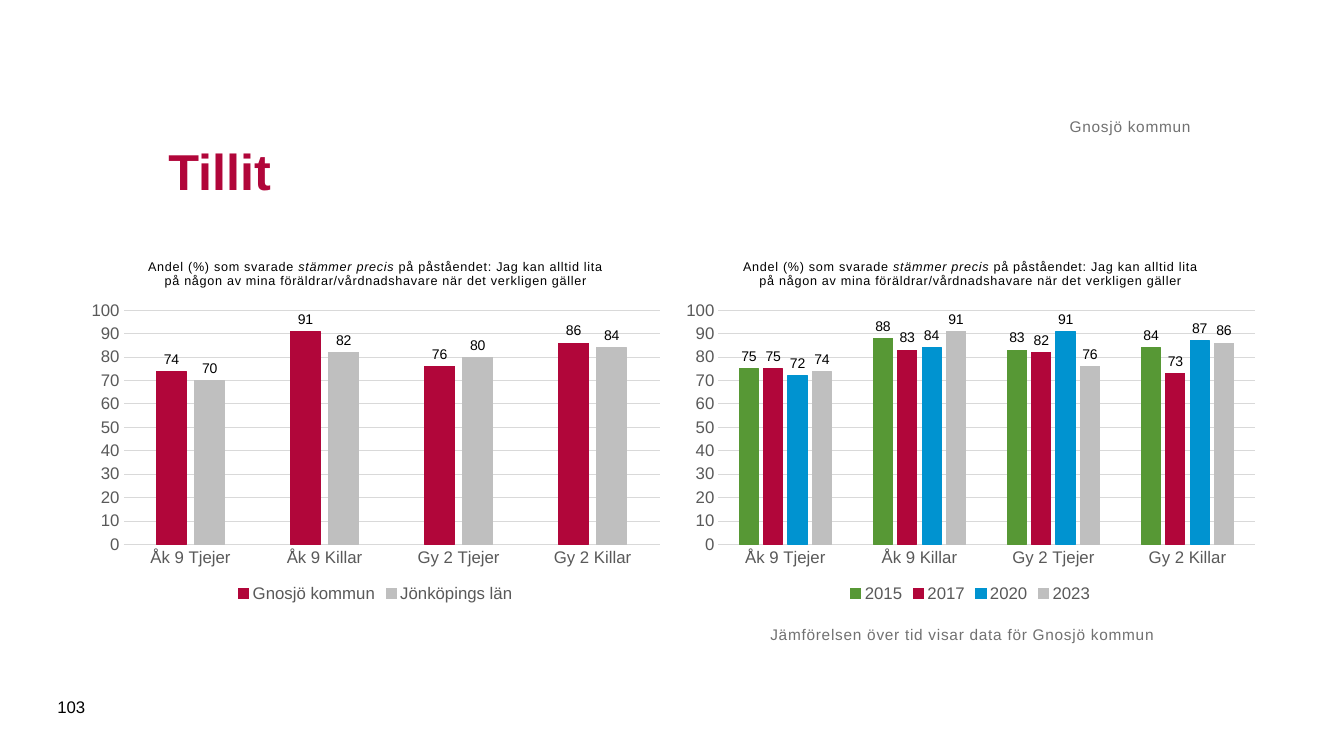
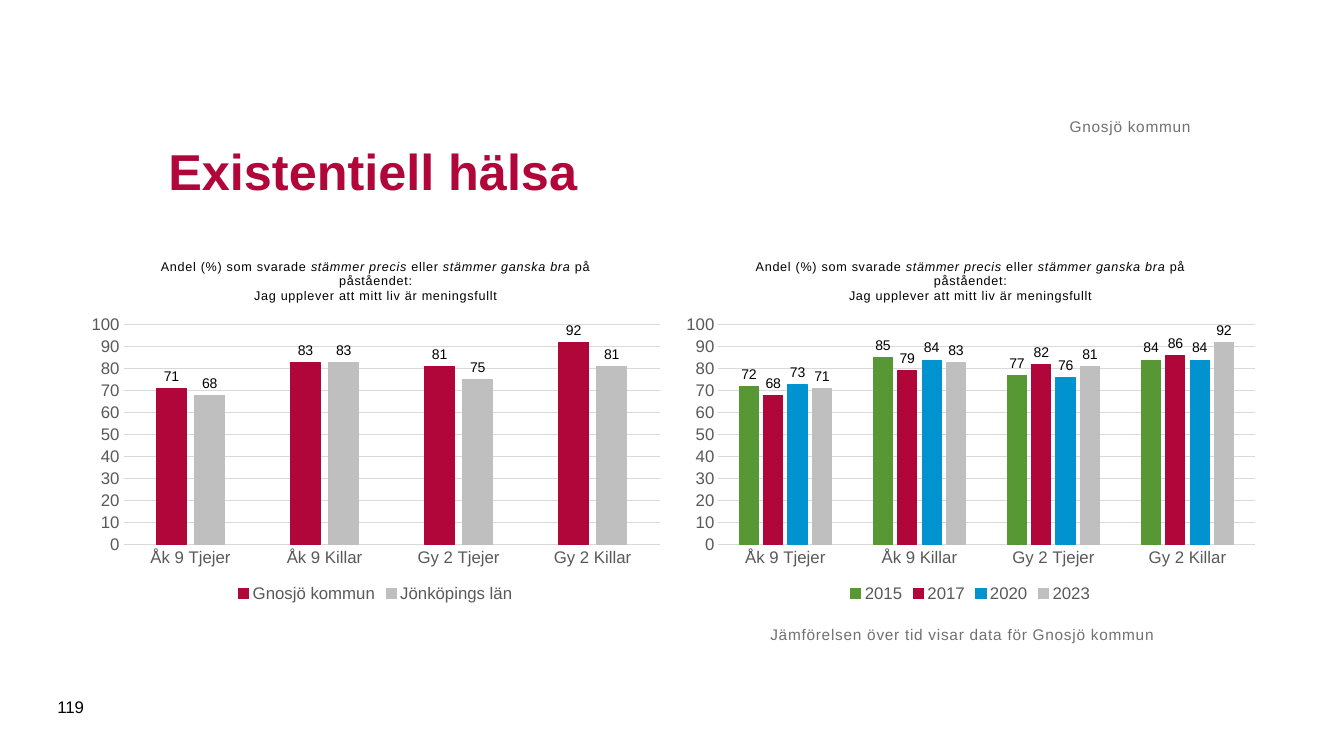
from pptx import Presentation
from pptx.chart.data import CategoryChartData
from pptx.dml.color import RGBColor
from pptx.enum.chart import XL_CHART_TYPE, XL_LABEL_POSITION, XL_LEGEND_POSITION, XL_TICK_MARK
from pptx.enum.text import MSO_ANCHOR, MSO_AUTO_SIZE, PP_ALIGN
from pptx.util import Inches, Pt

FONT = "Arial"
RED, GREEN, BLUE, SILVER = "B1063A", "579835", "0093D0", "BFBFBF"
BLACK, DARK, GREY, RULE = "000000", "595959", "717171", "D9D9D9"
FORMAT = "#,##0;#,##0"
PLACE = "Gnosjö kommun"
NOTE = "Jämförelsen över tid visar data för Gnosjö kommun"
GROUPS = ["Åk 9 Tjejer", "Åk 9 Killar", "Gy 2 Tjejer", "Gy 2 Killar"]
AREAS = [(PLACE, RED), ("Jönköpings län", SILVER)]
YEARS = [("2015", GREEN), ("2017", RED), ("2020", BLUE), ("2023", SILVER)]

SLIDES = [
    {
        "title": "Tillit",
        "number": "103",
        "question": [
            "Andel (%) som svarade *stämmer precis* på påståendet: Jag kan alltid lita "
            "på någon av mina föräldrar/vårdnadshavare när det verkligen gäller",
        ],
        "areas": [(74, 91, 76, 86), (70, 82, 80, 84)],
        "years": [(75, 88, 83, 84), (75, 83, 82, 73), (72, 84, 91, 87), (74, 91, 76, 86)],
    },
    {
        "title": "Existentiell hälsa",
        "number": "119",
        "question": [
            "Andel (%) som svarade *stämmer precis* eller *stämmer ganska bra* på påståendet:",
            "Jag upplever att mitt liv är meningsfullt",
        ],
        "areas": [(71, 83, 81, 92), (68, 83, 75, 81)],
        "years": [(72, 85, 77, 84), (68, 79, 82, 86), (73, 84, 76, 84), (71, 83, 81, 92)],
    },
]


def color(code):
    return RGBColor.from_string(code)


def style(font, size, code, bold=False):
    font.name, font.size, font.bold = FONT, Pt(size), bold
    font.color.rgb = color(code)


def space(run):
    run._r.get_or_add_rPr().set("spc", "50")


def add_text(slide, text, box, size, code, anchor, align=PP_ALIGN.LEFT, inset=True, wide=False):
    frame = slide.shapes.add_textbox(*map(Inches, box)).text_frame
    frame.word_wrap = True
    frame.vertical_anchor = anchor
    if not inset:
        frame.margin_left = frame.margin_right = frame.margin_top = frame.margin_bottom = 0
    para = frame.paragraphs[0]
    para.alignment = align
    run = para.add_run()
    run.text = text
    if wide:
        space(run)
    style(para.font, size, code)


def add_title(slide, text):
    title = slide.shapes.title
    title.left, title.top, title.width, title.height = map(Inches, (1.57, 0.98, 10.24, 1.42))
    frame = title.text_frame
    frame.text = text
    frame.auto_size = MSO_AUTO_SIZE.NONE
    frame.vertical_anchor = MSO_ANCHOR.MIDDLE
    para = frame.paragraphs[0]
    para.alignment = PP_ALIGN.LEFT
    style(para.font, 36, RED, True)


def add_heading(chart, lines):
    frame = chart.chart_title.text_frame
    for row, line in enumerate(lines):
        para = frame.add_paragraph() if row else frame.paragraphs[0]
        para.alignment = PP_ALIGN.CENTER
        for part, text in enumerate(line.split("*")):
            run = para.add_run()
            run.text = text
            style(run.font, 9, BLACK)
            run.font.italic = part % 2 == 1
            space(run)
    chart.chart_title.include_in_layout = False


def format_axes(chart):
    for axis in (chart.category_axis, chart.value_axis):
        axis.major_tick_mark = axis.minor_tick_mark = XL_TICK_MARK.NONE
        style(axis.tick_labels.font, 12, DARK)
    scale = chart.value_axis
    scale.minimum_scale, scale.maximum_scale, scale.major_unit = 0, 100, 10
    scale.tick_labels.number_format = FORMAT
    scale.tick_labels.number_format_is_linked = False
    scale.format.line.fill.background()
    for line in (chart.category_axis.format.line, scale.major_gridlines.format.line):
        line.color.rgb = color(RULE)
        line.width = Pt(0.75)


def add_bars(slide, left, lines, names, values):
    data = CategoryChartData(number_format=FORMAT)
    data.categories = GROUPS
    for (name, _), row in zip(names, values):
        data.add_series(name, row)
    box = map(Inches, (left, 2.4, 5.87, 3.62))
    chart = slide.shapes.add_chart(XL_CHART_TYPE.COLUMN_CLUSTERED, *box, data).chart
    style(chart.font, 10, BLACK)
    add_heading(chart, lines)
    format_axes(chart)
    chart.has_legend = True
    chart.legend.position = XL_LEGEND_POSITION.BOTTOM
    chart.legend.include_in_layout = False
    style(chart.legend.font, 12, DARK)
    plot = chart.plots[0]
    plot.gap_width, plot.overlap, plot.vary_by_categories = 219, -27, False
    for series, (_, code) in zip(plot.series, names):
        series.format.fill.solid()
        series.format.fill.fore_color.rgb = color(code)
        series.format.line.color.rgb = color(code)
        series.format.line.width = Pt(0.75)
        labels = series.data_labels
        labels.show_value = True
        labels.position = XL_LABEL_POSITION.OUTSIDE_END
        labels.number_format = FORMAT
        labels.number_format_is_linked = False
        style(labels.font, 10, BLACK)


def add_slide(deck, item):
    slide = deck.slides.add_slide(deck.slide_layouts[5])
    add_title(slide, item["title"])
    add_bars(slide, 0.79, item["question"], AREAS, item["areas"])
    add_bars(slide, 6.69, item["question"], YEARS, item["years"])
    add_text(slide, NOTE, (7.64, 6.2, 5.31, 0.94), 11, GREY, MSO_ANCHOR.TOP,
             inset=False, wide=True)
    add_text(slide, PLACE, (1.57, 0.62, 10.24, 0.73), 11, GREY, MSO_ANCHOR.BOTTOM,
             PP_ALIGN.RIGHT, inset=False, wide=True)
    add_text(slide, item["number"], (0.47, 6.81, 0.57, 0.4), 12, BLACK, MSO_ANCHOR.MIDDLE)


def main():
    deck = Presentation()
    deck.slide_width, deck.slide_height = Inches(13.33), Inches(7.5)
    for item in SLIDES:
        add_slide(deck, item)
    deck.save("out.pptx")


if __name__ == "__main__":
    main()
